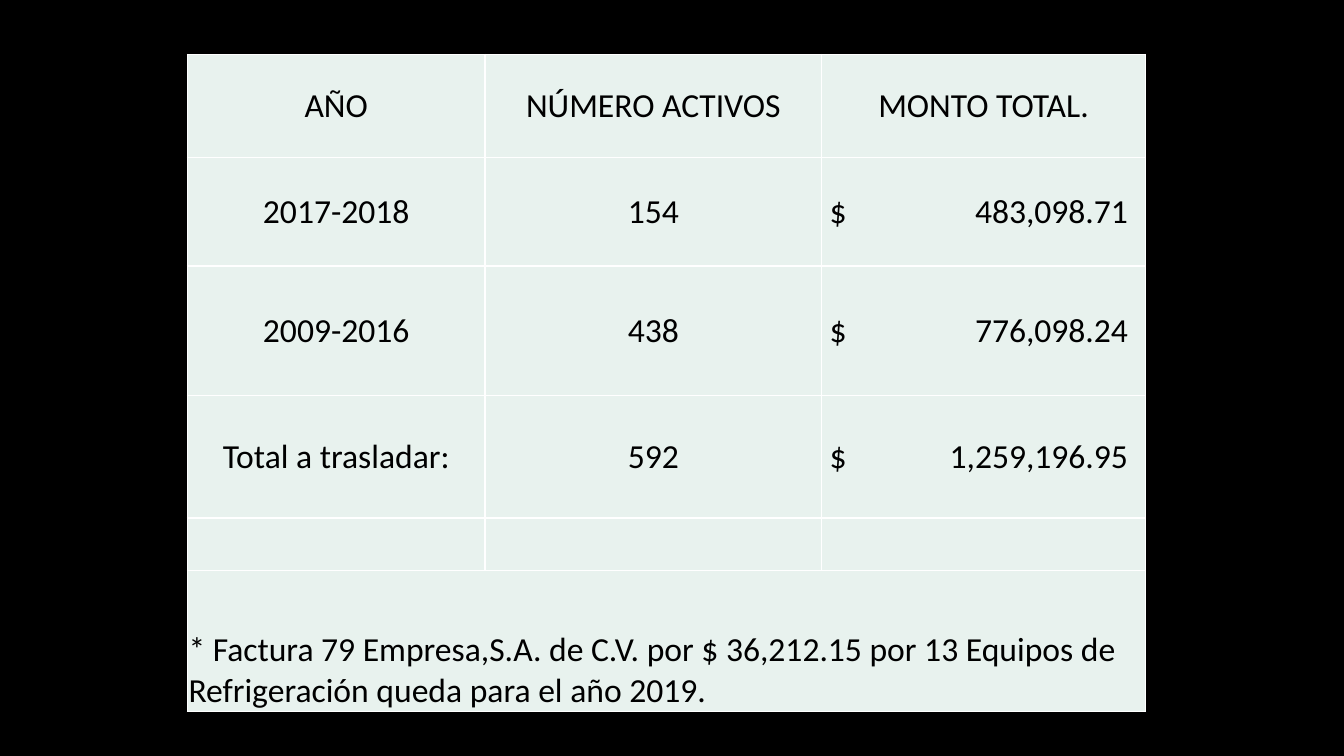
from lxml import etree
from pptx import Presentation
from pptx.dml.color import RGBColor
from pptx.enum import text
from pptx.oxml import ns
from pptx.util import Inches, Pt

COLORS = {"background": "000000", "cell": "E8F2EE", "border": "FFFFFF", "text": "000000"}
COLUMN_WIDTHS = [2.95, 3.34, 3.21]
ROW_HEIGHTS = [1.02, 1.08, 1.28, 1.22, 0.52, 1.4]
AMOUNT_COLUMN = 2
AMOUNT_INDENT = 0.08
AMOUNT_TAB = 2.96

ASSETS = [
    ["AÑO", "NÚMERO ACTIVOS", "MONTO TOTAL."],
    ["2017-2018", "154", "$\t483,098.71"],
    ["2009-2016", "438", "$\t776,098.24"],
    ["Total a trasladar:", "592", "$\t1,259,196.95"],
    ["", "", ""],
]
INVOICE_NOTE = ("* Factura 79 Empresa,S.A. de C.V. por $ 36,212.15 por 13 Equipos de "
                "Refrigeración queda para el año 2019.")


def rgb(name):
    return RGBColor.from_string(COLORS[name])


def add_borders(cell, color, width=1):
    properties = cell._tc.get_or_add_tcPr()
    for position, side in enumerate(["lnL", "lnR", "lnT", "lnB"]):
        line = etree.Element(ns.qn(f"a:{side}"), w=str(Pt(width)))
        fill = etree.SubElement(line, ns.qn("a:solidFill"))
        etree.SubElement(fill, ns.qn("a:srgbClr"), val=COLORS[color])
        properties.insert(position, line)


def add_right_tab(paragraph, position):
    tabs = etree.SubElement(paragraph._p.get_or_add_pPr(), ns.qn("a:tabLst"))
    etree.SubElement(tabs, ns.qn("a:tab"), pos=str(Inches(position)), algn="r")


def write(cell, words, align=text.PP_ALIGN.CENTER, anchor=text.MSO_ANCHOR.MIDDLE,
          size=24, font="Calibri", color="text", indent=0.01, tab=None):
    cell.vertical_anchor = anchor
    cell.margin_left = Inches(indent)
    cell.margin_right = cell.margin_top = Inches(0.01)
    cell.margin_bottom = 0
    paragraph = cell.text_frame.paragraphs[0]
    paragraph.alignment = align
    if tab:
        add_right_tab(paragraph, tab)
    run = paragraph.add_run()
    run.text = words
    run.font.size = Pt(size)
    run.font.name = font
    run.font.color.rgb = rgb(color)


def add_assets_table(slide, left, top, width, height):
    table = slide.shapes.add_table(len(ROW_HEIGHTS), len(COLUMN_WIDTHS), Inches(left),
                                   Inches(top), Inches(width), Inches(height)).table
    for column, share in zip(table.columns, COLUMN_WIDTHS):
        column.width = Inches(width * share / sum(COLUMN_WIDTHS))
    for row, share in zip(table.rows, ROW_HEIGHTS):
        row.height = Inches(height * share / sum(ROW_HEIGHTS))

    for cell in table.iter_cells():
        cell.fill.solid()
        cell.fill.fore_color.rgb = rgb("cell")
        add_borders(cell, "border")

    for row, entries in enumerate(ASSETS):
        for column, entry in enumerate(entries):
            if not entry:
                continue
            cell = table.cell(row, column)
            if row > 0 and column == AMOUNT_COLUMN:
                write(cell, entry, align=text.PP_ALIGN.LEFT, indent=AMOUNT_INDENT,
                      tab=AMOUNT_TAB)
            else:
                write(cell, entry)

    note = table.cell(len(ASSETS), 0)
    note.merge(table.cell(len(ASSETS), len(COLUMN_WIDTHS) - 1))
    write(note, INVOICE_NOTE, align=text.PP_ALIGN.LEFT, anchor=text.MSO_ANCHOR.BOTTOM)


def main():
    deck = Presentation()
    deck.slide_width, deck.slide_height = Inches(13.33), Inches(7.5)
    slide = deck.slides.add_slide(deck.slide_layouts[6])
    slide.background.fill.solid()
    slide.background.fill.fore_color.rgb = rgb("background")
    add_assets_table(slide, 1.86, 0.54, 9.5, 6.52)
    deck.save("out.pptx")


if __name__ == "__main__":
    main()
